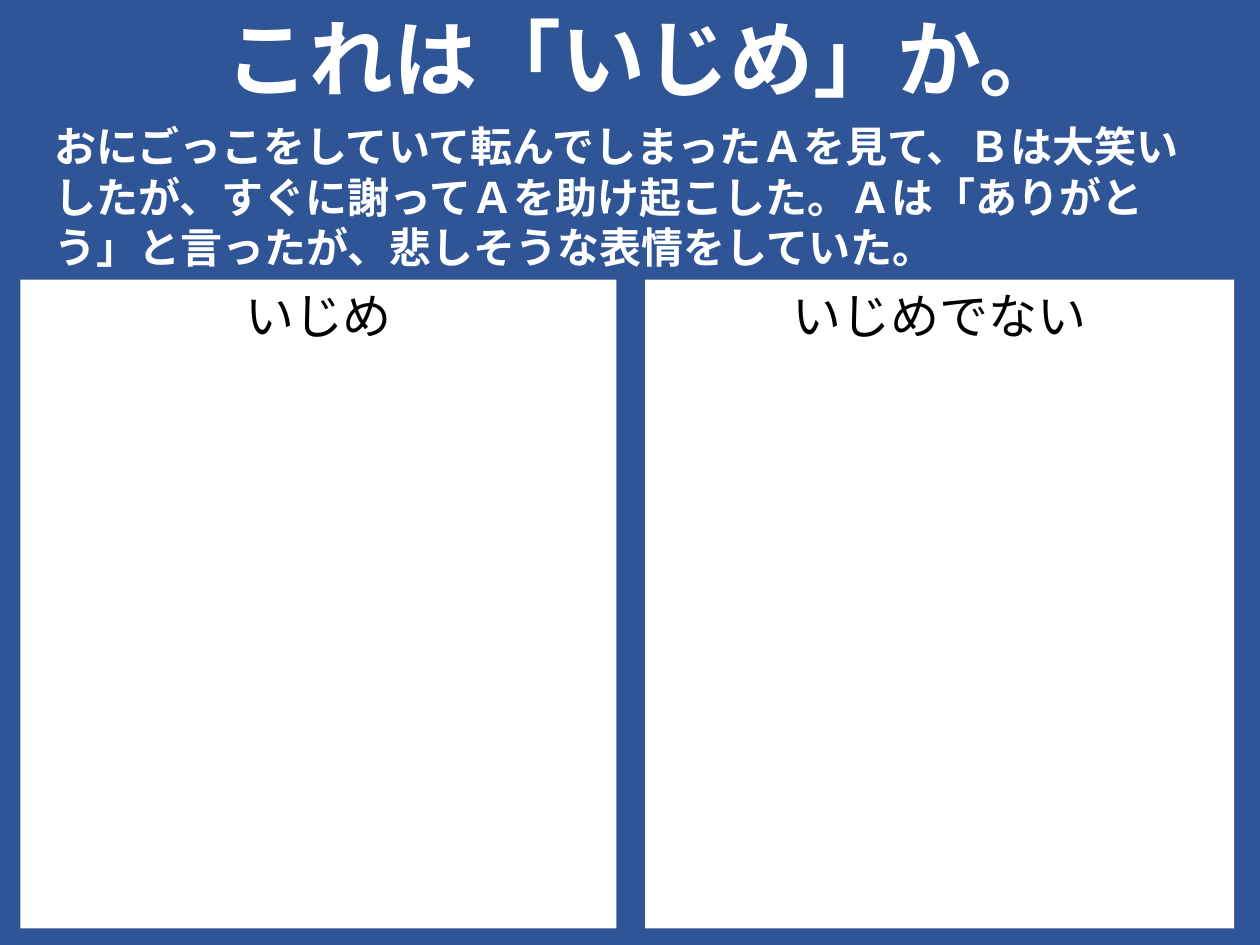
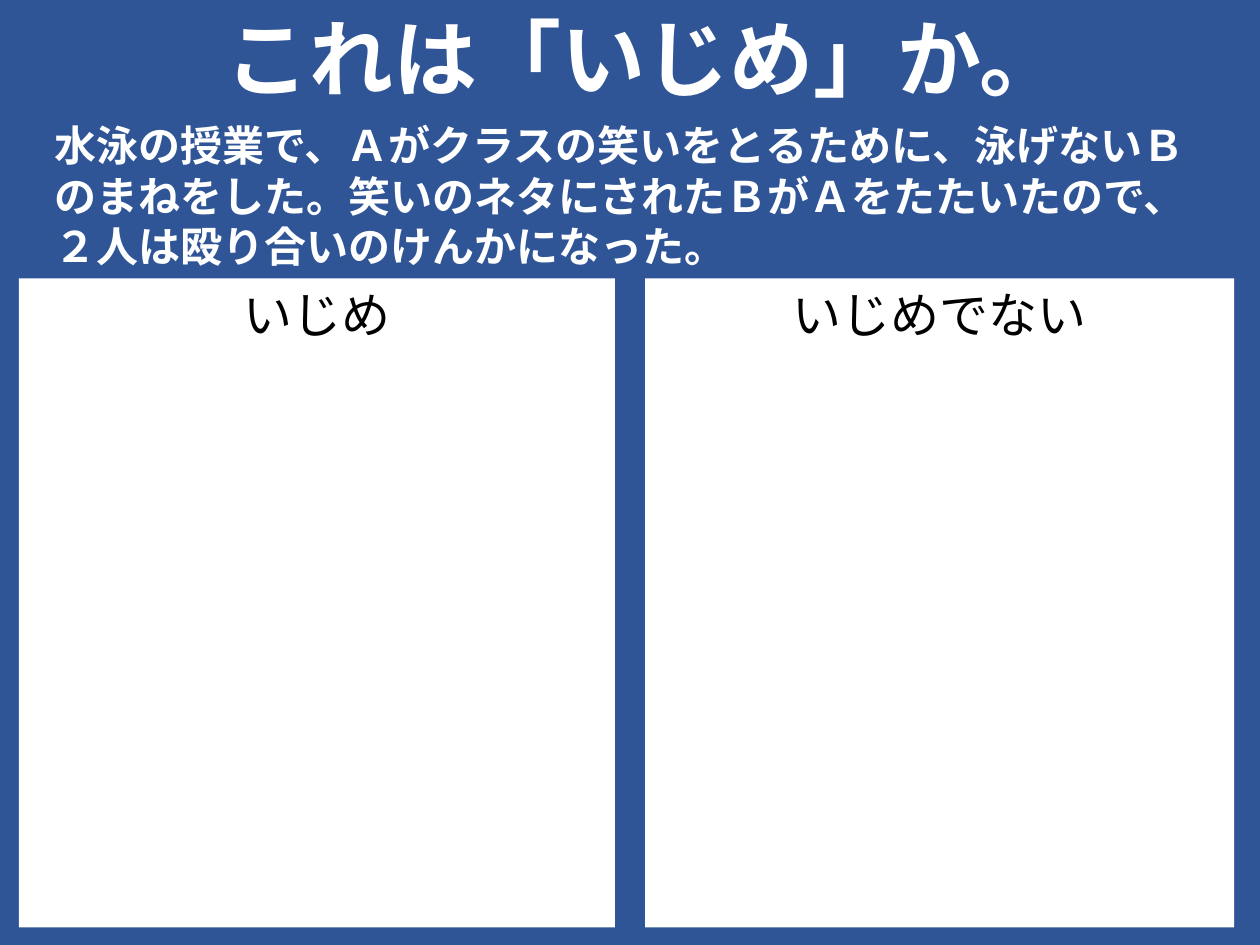
"""Build two discussion slides that ask whether a situation counts as bullying."""
import lxml.etree
import pptx
import pptx.dml.color
import pptx.enum.lang
import pptx.enum.shapes
import pptx.enum.text
import pptx.oxml.ns
import pptx.util

Pt = pptx.util.Pt
ALIGN = pptx.enum.text.PP_ALIGN
BLUE = pptx.dml.color.RGBColor(0x2F, 0x55, 0x97)
WHITE = pptx.dml.color.RGBColor(0xFF, 0xFF, 0xFF)
BLACK = pptx.dml.color.RGBColor(0x00, 0x00, 0x00)
LATIN_FONT = "Calibri"
JAPANESE_FONT = "Noto Sans CJK JP"
TITLE = "これは「いじめ」か。"
PANEL_HEIGHT = 370.8
SCENARIO_HEIGHT = 94.3

SCENARIOS = [
    ("おにごっこをしていて転んでしまったＡを見て、Ｂは大笑いしたが、すぐに謝ってＡを助け起こした。"
     "Ａは「ありがとう」と言ったが、悲しそうな表情をしていた。", 65.5, 11.7),
    ("水泳の授業で、Ａがクラスの笑いをとるために、泳げないＢのまねをした。"
     "笑いのネタにされたＢがＡをたたいたので、２人は殴り合いのけんかになった。", 64.8, 10.8),
]


def write_text(shape, text, size, color, font_name, bold, alignment):
    frame = shape.text_frame
    frame.word_wrap = True
    frame.vertical_anchor = pptx.enum.text.MSO_ANCHOR.TOP
    paragraph = frame.paragraphs[0]
    paragraph.alignment = alignment
    run = paragraph.add_run()
    run.text = text
    run.font.size = Pt(size)
    run.font.bold = bold
    run.font.color.rgb = color
    run.font.name = font_name
    run.font.language_id = pptx.enum.lang.MSO_LANGUAGE_ID.JAPANESE
    properties = run.font._element
    east_asian = lxml.etree.SubElement(properties, pptx.oxml.ns.qn("a:ea"))
    east_asian.set("typeface", JAPANESE_FONT)


presentation = pptx.Presentation()
presentation.slide_width = Pt(720)
presentation.slide_height = Pt(540)

for scenario, scenario_top, left_margin in SCENARIOS:
    slide = presentation.slides.add_slide(presentation.slide_layouts[6])
    slide.background.fill.solid()
    slide.background.fill.fore_color.rgb = BLUE

    panel_top = scenario_top + SCENARIO_HEIGHT
    panels = [("いじめ", left_margin, 340.6), ("いじめでない", 368.6, 336.6)]
    for label, left, width in panels:
        panel = slide.shapes.add_shape(
            pptx.enum.shapes.MSO_SHAPE.RECTANGLE,
            Pt(left), Pt(panel_top), Pt(width), Pt(PANEL_HEIGHT))
        panel.shadow.inherit = False
        panel.fill.solid()
        panel.fill.fore_color.rgb = WHITE
        panel.line.fill.background()
        write_text(panel, label, 28, BLACK, LATIN_FONT, False, ALIGN.CENTER)

    title_box = slide.shapes.add_textbox(Pt(34.6), Pt(0), Pt(667.4), Pt(65.5))
    write_text(title_box, TITLE, 48, WHITE, LATIN_FONT, True, ALIGN.CENTER)

    scenario_box = slide.shapes.add_textbox(
        Pt(23.8), Pt(scenario_top), Pt(678.2), Pt(SCENARIO_HEIGHT))
    write_text(scenario_box, scenario, 24, WHITE, JAPANESE_FONT, True, ALIGN.LEFT)

presentation.save("out.pptx")
